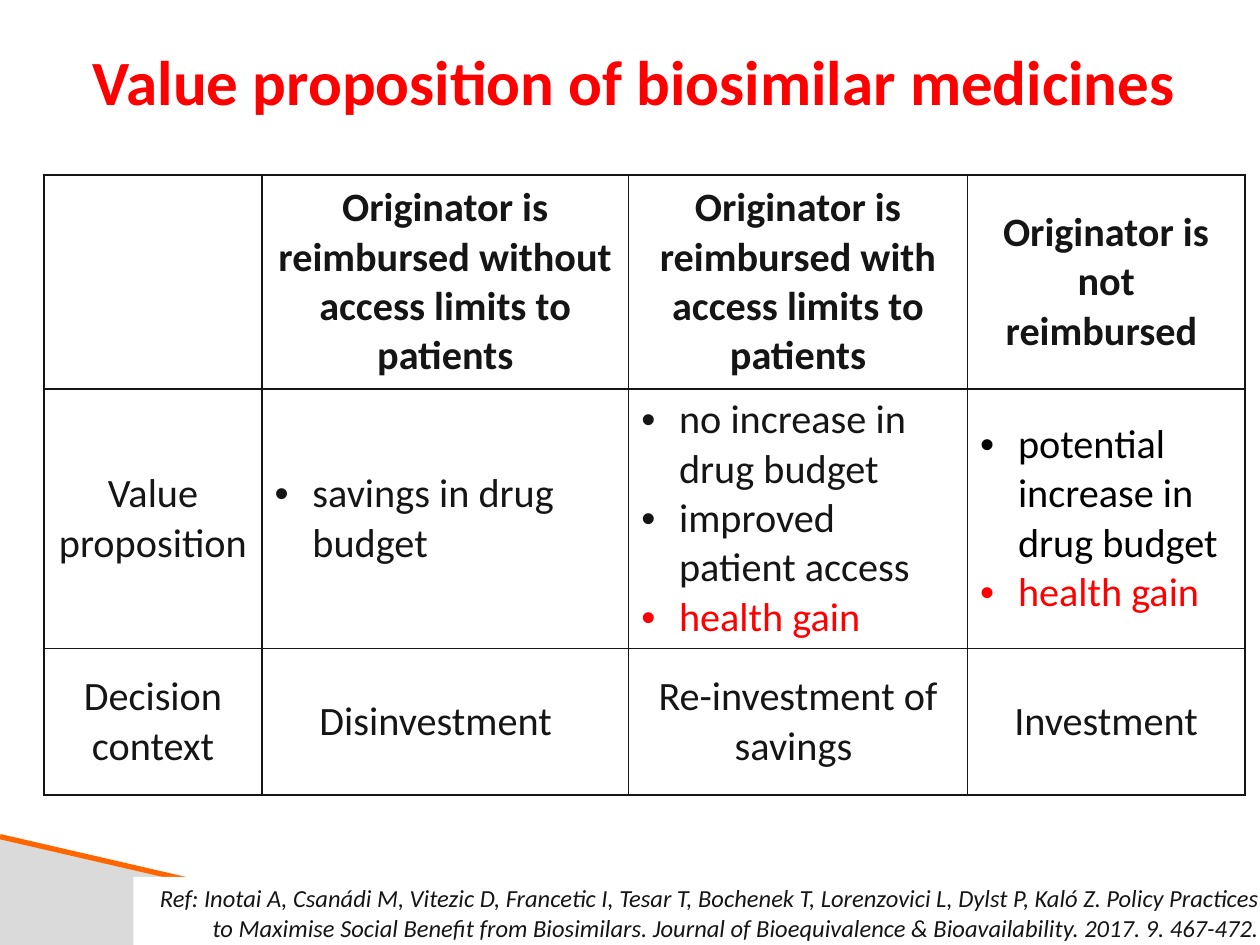
from dataclasses import dataclass

from lxml import etree
from pptx import Presentation
from pptx.dml.color import RGBColor
from pptx.enum.shapes import MSO_CONNECTOR, MSO_SHAPE
from pptx.enum.text import MSO_ANCHOR, PP_ALIGN
from pptx.oxml.ns import qn
from pptx.util import Inches, Pt

CENTER, LEFT, RIGHT = PP_ALIGN.CENTER, PP_ALIGN.LEFT, PP_ALIGN.RIGHT
MIDDLE, TOP = MSO_ANCHOR.MIDDLE, MSO_ANCHOR.TOP
RECTANGLE, TRIANGLE = MSO_SHAPE.RECTANGLE, MSO_SHAPE.RIGHT_TRIANGLE
STRAIGHT = MSO_CONNECTOR.STRAIGHT


@dataclass(frozen=True)
class Theme:
    font: str = "Calibri"
    ink: str = "151515"
    black: str = "000000"
    accent: str = "FF0000"
    paper: str = "FFFFFF"
    wedge: str = "DADADA"
    edge: str = "FF6600"
    title_size: int = 36
    table_size: int = 23
    reference_size: int = 14
    border: float = 1
    edge_width: float = 3
    bullet_indent: float = 0.3


THEME = Theme()

TITLE = "Value proposition of biosimilar medicines"
COLUMNS = (1.73, 2.91, 2.69, 2.2)
ROWS = (1.69, 2.0, 1.16)
HEADERS = (
    "",
    "Originator is reimbursed without access limits to patients",
    "Originator is reimbursed with access limits to patients",
    "Originator is not reimbursed ",
)
# Each bulleted cell is a list of (wording, colour)
VALUES = (
    "Value proposition",
    [("savings in drug budget", THEME.ink)],
    [("no increase in drug budget", THEME.ink),
     ("improved patient access", THEME.ink),
     ("health gain", THEME.accent)],
    [("potential increase in drug budget", THEME.black),
     ("health gain", THEME.accent)],
)
CONTEXTS = ("Decision context", "Disinvestment\t",
            "Re-investment of savings ", "Investment")
REFERENCE = (
    "Ref: Inotai A, Csanádi M, Vitezic D, Francetic I, Tesar T, Bochenek T, "
    "Lorenzovici L, Dylst P, Kaló Z. Policy Practices to Maximise Social "
    "Benefit from Biosimilars. Journal of Bioequivalence & Bioavailability. "
    "2017. 9. 467-472."
)


def color(code):
    return RGBColor.from_string(code)


def style(para, size, code, align, bold=False, italic=False):
    para.alignment = align
    font = para.font
    font.name, font.size = THEME.font, Pt(size)
    font.bold, font.italic = bold, italic
    font.color.rgb = color(code)


def add_bullet(para):
    props = para._p.get_or_add_pPr()
    indent = Inches(THEME.bullet_indent)
    props.set("marL", str(indent))
    props.set("indent", str(-indent))
    bullet_font = etree.Element(qn("a:buFont"), typeface="Arial")
    bullet = etree.Element(qn("a:buChar"), char="•")
    props.insert(0, bullet_font)
    props.insert(1, bullet)


def add_borders(cell):
    props = cell._tc.get_or_add_tcPr()
    for place, side in enumerate(("lnL", "lnR", "lnT", "lnB")):
        line = etree.Element(qn(f"a:{side}"), w=str(Pt(THEME.border)))
        fill = etree.SubElement(line, qn("a:solidFill"))
        etree.SubElement(fill, qn("a:srgbClr"), val=THEME.ink)
        props.insert(place, line)


def add_panel(page, preset, box, code):
    panel = page.shapes.add_shape(preset, *map(Inches, box))
    panel.shadow.inherit = False
    panel.fill.solid()
    panel.fill.fore_color.rgb = color(code)
    panel.line.fill.background()
    return panel


def add_corner(page, box):
    """Grey wedge with an orange edge."""
    left, top, width, height = box
    add_panel(page, TRIANGLE, box, THEME.wedge)
    edge = page.shapes.add_connector(
        STRAIGHT, *map(Inches, (left, top, left + width, top + height)))
    edge.line.color.rgb = color(THEME.edge)
    edge.line.width = Pt(THEME.edge_width)
    etree.SubElement(edge._element.spPr, qn("a:effectLst"))


def add_title(page, box):
    frame = page.shapes.add_textbox(*map(Inches, box)).text_frame
    frame.word_wrap = True
    frame.vertical_anchor = MIDDLE
    para = frame.paragraphs[0]
    para.text = TITLE
    style(para, THEME.title_size, THEME.accent, CENTER, bold=True)


def fill_cell(cell, content, bold):
    cell.vertical_anchor = MIDDLE
    cell.fill.solid()
    cell.fill.fore_color.rgb = color(THEME.paper)
    add_borders(cell)
    bulleted = isinstance(content, list)
    items = content if bulleted else [(content, THEME.ink)]
    frame = cell.text_frame
    for number, (wording, code) in enumerate(items):
        para = frame.add_paragraph() if number else frame.paragraphs[0]
        para.text = wording
        style(para, THEME.table_size, code, LEFT if bulleted else CENTER, bold)
        if bulleted:
            add_bullet(para)


def add_matrix(page, box):
    """Table whose columns and rows share the box in fixed proportions."""
    left, top, width, height = box
    table = page.shapes.add_table(
        len(ROWS), len(COLUMNS), *map(Inches, box)).table
    table.horz_banding = False
    for column, share in zip(table.columns, COLUMNS):
        column.width = Inches(width * share / sum(COLUMNS))
    for row, share in zip(table.rows, ROWS):
        row.height = Inches(height * share / sum(ROWS))
    for r, contents in enumerate((HEADERS, VALUES, CONTEXTS)):
        for c, content in enumerate(contents):
            fill_cell(table.cell(r, c), content, bold=r == 0)


def add_reference(page, box):
    frame = add_panel(page, RECTANGLE, box, THEME.paper).text_frame
    frame.word_wrap = True
    frame.vertical_anchor = TOP
    frame.margin_right = 0
    para = frame.paragraphs[0]
    para.text = REFERENCE
    style(para, THEME.reference_size, THEME.ink, RIGHT, italic=True)


def main():
    deck = Presentation()
    deck.slide_width, deck.slide_height = Inches(10), Inches(7.5)
    page = deck.slides.add_slide(deck.slide_layouts[6])
    add_corner(page, (0, 6.64, 3.72, 0.86))
    add_matrix(page, (0.35, 1.39, 9.53, 4.87))
    add_title(page, (0.35, 0.13, 9.37, 1.02))
    add_reference(page, (1.06, 6.96, 8.94, 0.57))
    deck.save("out.pptx")


if __name__ == "__main__":
    main()
